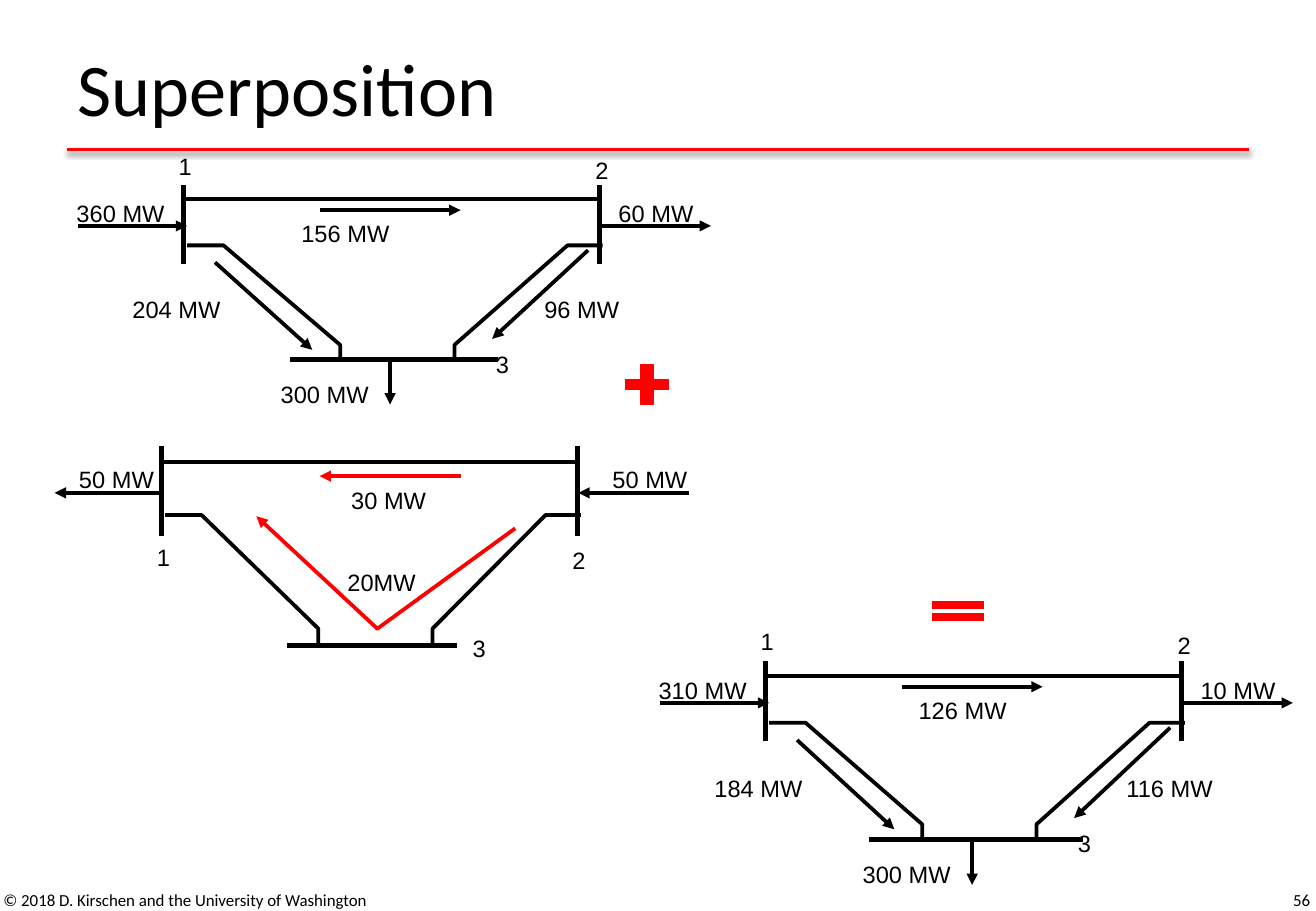
from dataclasses import dataclass

from lxml import etree
from pptx import Presentation
from pptx.dml.color import RGBColor
from pptx.enum.shapes import MSO_CONNECTOR as Connector, MSO_SHAPE as Shape
from pptx.enum.text import MSO_ANCHOR as Anchor, PP_ALIGN as Align
from pptx.oxml import parse_xml
from pptx.oxml.ns import nsdecls, qn
from pptx.util import Inches, Pt


@dataclass(frozen=True)
class Theme:
    ink: RGBColor = RGBColor(0, 0, 0)
    accent: RGBColor = RGBColor(255, 0, 0)
    heading_font: str = "Calibri"
    label_font: str = "Arial"
    title_size: float = 44
    label_size: float = 14
    footer_size: float = 10
    bus_width: float = 3
    wire_width: float = 2.25
    equals_width: float = 4.5
    rule_width: float = 2


RULE_SHADOW = (
    f'<a:effectLst {nsdecls("a")}><a:outerShdw blurRad="40000" dist="20000" '
    'dir="5400000" rotWithShape="0"><a:srgbClr val="000000">'
    '<a:alpha val="38000"/></a:srgbClr></a:outerShdw></a:effectLst>'
)


def write(frame, text, *, font, size, color, align=Align.LEFT,
          anchor=Anchor.TOP, inset=None):
    frame.word_wrap = True
    frame.vertical_anchor = anchor
    if inset is not None:
        frame.margin_left = frame.margin_right = Inches(inset)
        frame.margin_top = frame.margin_bottom = Inches(inset)
    paragraph = frame.paragraphs[0]
    paragraph.alignment = align
    run = paragraph.add_run()
    run.text = text
    run.font.name = font
    run.font.size = Pt(size)
    run.font.color.rgb = color


class Diagram:
    def __init__(self, slide, theme):
        self.slide = slide
        self.theme = theme
        self.layer = slide.shapes

    def start_group(self):
        self.layer = self.slide.shapes.add_group_shape().shapes

    def end_group(self):
        self.layer = self.slide.shapes

    def title(self, text, left, top, width, height):
        heading = self.slide.shapes.title
        heading.left, heading.top = Inches(left), Inches(top)
        heading.width, heading.height = Inches(width), Inches(height)
        write(heading.text_frame, text, font=self.theme.heading_font,
              size=self.theme.title_size, color=self.theme.ink,
              anchor=Anchor.MIDDLE)

    def footer(self, text, left, width, align=Align.LEFT):
        note = self.layer.add_textbox(
            Inches(left), Inches(7.21), Inches(width), Inches(0.4))
        write(note.text_frame, text, font=self.theme.heading_font,
              size=self.theme.footer_size, color=self.theme.ink,
              align=align, anchor=Anchor.MIDDLE)

    def label(self, text, left, top):
        width = 0.25 if len(text) == 1 else 0.9
        box = self.layer.add_textbox(
            Inches(left), Inches(top), Inches(width), Inches(0.25))
        write(box.text_frame, text, font=self.theme.label_font,
              size=self.theme.label_size, color=self.theme.ink, inset=0)

    def line(self, start, end, width=None, color=None, arrow=False,
             shadow=False):
        wire = self.layer.add_connector(
            Connector.STRAIGHT, *map(Inches, (*start, *end)))
        wire.line.width = Pt(width or self.theme.wire_width)
        wire.line.color.rgb = color or self.theme.ink
        if arrow:
            etree.SubElement(wire.line._get_or_add_ln(), qn("a:tailEnd"),
                             type="triangle")
        properties = wire._element.spPr
        if shadow:
            properties.append(parse_xml(RULE_SHADOW))
        else:
            etree.SubElement(properties, qn("a:effectLst"))

    def bent_wire(self, points):
        corners = [(Inches(x), Inches(y)) for x, y in points]
        builder = self.layer.build_freeform(*corners[0], scale=1.0)
        builder.add_line_segments(corners[1:], close=False)
        wire = builder.convert_to_shape()
        wire.shadow.inherit = False
        wire.fill.background()
        wire.line.color.rgb = self.theme.ink
        wire.line.width = Pt(self.theme.wire_width)

    def plus(self, left, top, width, height):
        sign = self.layer.add_shape(
            Shape.CROSS, Inches(left), Inches(top), Inches(width),
            Inches(height))
        sign.adjustments[0] = 0.38
        sign.shadow.inherit = False
        sign.fill.solid()
        sign.fill.fore_color.rgb = self.theme.accent
        sign.line.color.rgb = self.theme.accent
        sign.line.width = Pt(0.75)

    def network(self, origin, stretch, bus3, labels, arrows):
        def place(x, y):
            return origin[0] + x, origin[1] + y * stretch

        self.start_group()
        for x in (0, 3.42):
            self.line(place(x, 0), place(x, 0.65), self.theme.bus_width)
        self.line(place(bus3[0], 1.44), place(bus3[1], 1.44),
                  self.theme.bus_width)
        self.line(place(0, 0.12), place(3.42, 0.12))
        for outer, bend, inner in ((0.03, 0.33, 1.29), (3.45, 3.16, 2.23)):
            self.bent_wire([place(outer, 0.5), place(bend, 0.5),
                            place(inner, 1.32), place(inner, 1.45)])
        for start, end in arrows:
            self.line(place(*start), place(*end), arrow=True)
        for text, x, y in labels:
            self.label(text, *place(x, y))

    def flow_network(self, origin, stretch, bus3, inflow, outflow,
                     flow12, flow13, flow23, flow12_left):
        labels = [
            ("1", -0.04, -0.27), ("2", 3.39, -0.24), ("3", 2.57, 1.36),
            (inflow, -0.88, 0.12), (outflow, 3.58, 0.12),
            ("300 MW", 0.8, 1.61), (flow12, flow12_left, 0.28),
            (flow13, -0.42, 0.91), (flow23, 2.97, 0.91),
        ]
        arrows = [
            ((-0.87, 0.34), (0.03, 0.34)), ((3.44, 0.34), (4.34, 0.34)),
            ((1.7, 1.44), (1.7, 1.81)), ((1.12, 0.21), (2.28, 0.21)),
            ((0.26, 0.64), (1.06, 1.36)), ((3.33, 0.54), (2.54, 1.27)),
        ]
        self.network(origin, stretch, bus3, labels, arrows)
        self.end_group()

    def correction_network(self):
        labels = [
            ("1", -0.04, 0.7), ("2", 3.38, 0.72), ("3", 2.56, 1.36),
            ("50 MW", -0.68, 0.14), ("50 MW", 3.71, 0.14),
            ("30 MW", 1.56, 0.29), ("20MW", 1.53, 0.88),
        ]
        arrows = [((0.02, 0.34), (-0.88, 0.34)),
                  ((4.34, 0.34), (3.43, 0.34))]
        self.network((1.33, 3.67), 1.14, (1.03, 2.43), labels, arrows)
        red = self.theme.accent
        self.line((3.79, 3.92), (2.63, 3.92), color=red, arrow=True)
        self.line((4.24, 4.35), (3.1, 5.18), color=red)
        self.line((3.11, 5.18), (2.11, 4.25), color=red, arrow=True)
        self.end_group()

    def equals(self):
        self.start_group()
        for y in (4.98, 5.08):
            self.line((7.67, y), (8.1, y), self.theme.equals_width,
                      self.theme.accent)
        self.end_group()


def main():
    deck = Presentation()
    deck.slide_width, deck.slide_height = Inches(10.83), Inches(7.5)
    theme = Theme()
    diagram = Diagram(deck.slides.add_slide(deck.slide_layouts[5]), theme)

    diagram.line((0.55, 1.23), (10.28, 1.23), theme.rule_width,
                 theme.accent, shadow=True)
    diagram.title("Superposition", 0.54, 0.13, 9.75, 1.17)
    diagram.footer("© 2018 D. Kirschen and the University of Washington",
                   -0.07, 4.2)
    diagram.footer("56", 8.35, 2.53, Align.RIGHT)

    diagram.flow_network((1.51, 1.52), 1, (0.88, 2.59), "360 MW", "60 MW",
                         "156 MW", "204 MW", "96 MW", 0.97)
    diagram.correction_network()
    diagram.flow_network((6.3, 5.44), 1.02, (0.85, 2.61), "310 MW", "10 MW",
                         "126 MW", "184 MW", "116 MW", 1.26)
    diagram.equals()
    diagram.plus(5.15, 3, 0.35, 0.33)
    deck.save("out.pptx")


if __name__ == "__main__":
    main()
